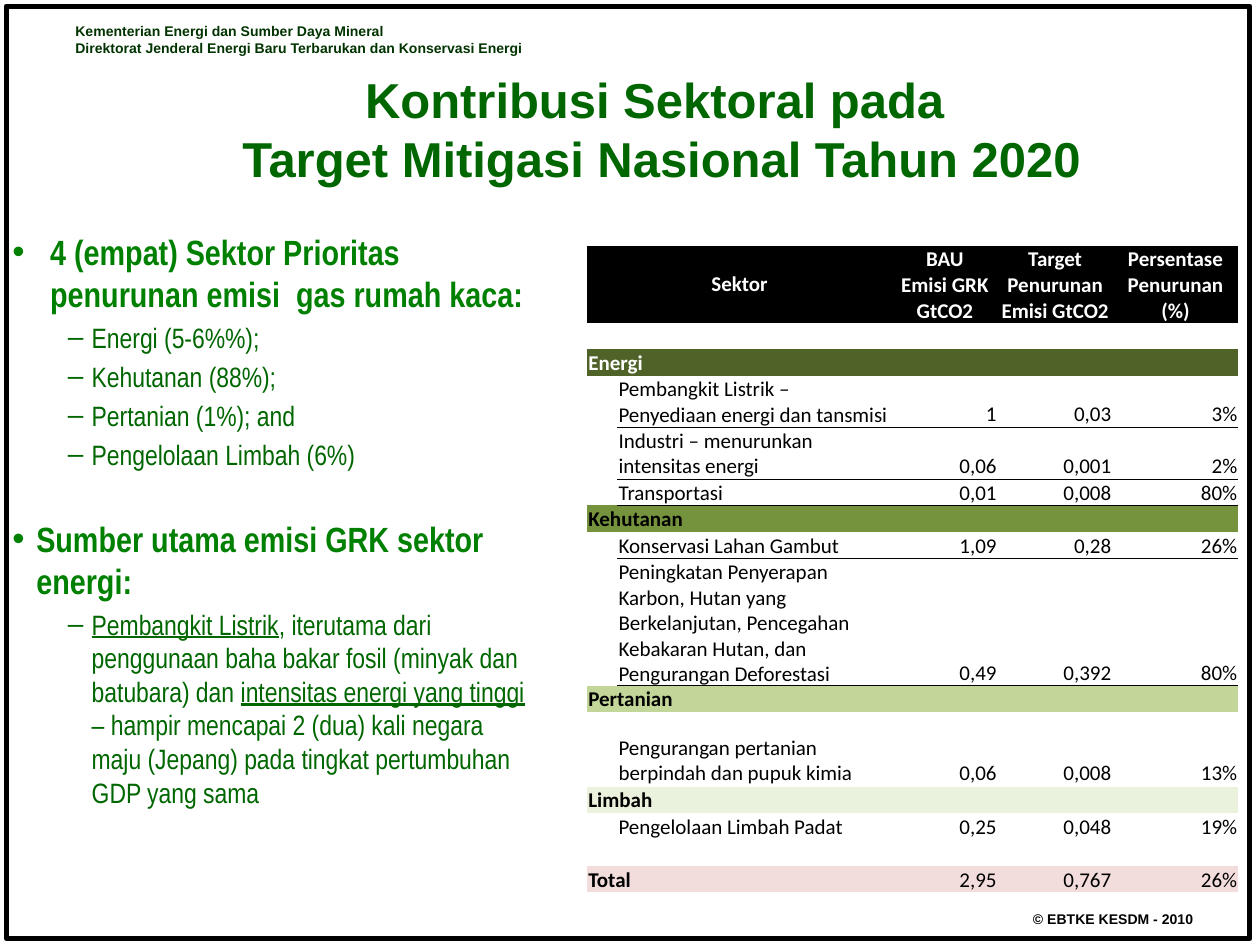
import pptx
import pptx.util
import pptx.dml.color
import pptx.enum.shapes
import pptx.enum.text
import pptx.oxml.ns
from lxml import etree

Inches = pptx.util.Inches
Pt = pptx.util.Pt
qn = pptx.oxml.ns.qn
ALIGN = pptx.enum.text.PP_ALIGN
ANCHOR = pptx.enum.text.MSO_ANCHOR

COLORS = {
    "black": "000000", "white": "FFFFFF", "ministry": "003300",
    "title": "006600", "heading": "008000", "energi": "4F6228",
    "kehutanan": "75923C", "pertanian": "C2D69A", "limbah": "EAF1DD",
    "total": "F2DDDC",
}
SMALL = {"name": "Arial", "size": Pt(8), "bold": True}
TITLE = {"name": "Arial", "size": Pt(28), "bold": True}
HEADING = {"name": "Arial Narrow", "size": Pt(20), "bold": True}
ITEM = {"name": "Arial Narrow", "size": Pt(16), "bold": False}
CELL = {"name": "Calibri", "size": Pt(12), "bold": False}
CELL_BOLD = {**CELL, "bold": True}

BULLETS = [
    (0, 0.3, 0, [("4 (empat) Sektor Prioritas penurunan emisi  gas rumah kaca:", False)]),
    (1, 0.63, 3.2, [("Energi (5-6%%);", False)]),
    (1, 0.63, 3.2, [("Kehutanan (88%);", False)]),
    (1, 0.63, 3.2, [("Pertanian (1%); and", False)]),
    (1, 0.63, 3.2, [("Pengelolaan Limbah (6%)", False)]),
    (0, 0.19, 26.5, [("Sumber utama emisi GRK sektor energi:", False)]),
    (1, 0.63, 3.2, [
        ("Pembangkit Listrik", True),
        (", iterutama dari penggunaan baha bakar fosil (minyak dan batubara) dan ", False),
        ("intensitas energi yang tinggi ", True),
        ("– hampir mencapai 2 (dua) kali negara maju (Jepang) pada tingkat "
         "pertumbuhan GDP yang sama", False)]),
]

COLUMNS = [0.24, 2.18, 0.84, 0.91, 1]
HEADER = ["Sektor", "BAU\nEmisi GRK\nGtCO2", "Target Penurunan Emisi GtCO2",
          "Persentase Penurunan\n(%)"]
ROWS = [
    ("header", 0.59, HEADER),
    ("blank", 0.2, []),
    ("energi", 0.2, ["Energi"]),
    ("ruled", 0.39, ["Pembangkit Listrik – Penyediaan energi dan tansmisi", "1", "0,03", "3%"]),
    ("ruled", 0.39, ["Industri – menurunkan intensitas energi", "0,06", "0,001", "2%"]),
    ("plain", 0.2, ["Transportasi", "0,01", "0,008", "80%"]),
    ("kehutanan", 0.2, ["Kehutanan"]),
    ("ruled", 0.2, ["Konservasi Lahan Gambut", "1,09", "0,28", "26%"]),
    ("plain", 0.97, ["Peningkatan Penyerapan Karbon, Hutan yang Berkelanjutan, Pencegahan "
                     "Kebakaran Hutan, dan Pengurangan Deforestasi", "0,49", "0,392", "80%"]),
    ("pertanian", 0.2, ["Pertanian"]),
    ("plain", 0.59, ["Pengurangan pertanian berpindah dan pupuk kimia", "0,06", "0,008", "13%"]),
    ("limbah", 0.2, ["Limbah"]),
    ("plain", 0.2, ["Pengelolaan Limbah Padat", "0,25", "0,048", "19%"]),
    ("blank", 0.2, []),
    ("total", 0.2, ["Total", "2,95", "0,767", "26%"]),
]


def rgb(name):
    return pptx.dml.color.RGBColor.from_string(COLORS[name])


def set_font(font, values, color):
    for key, value in values.items():
        setattr(font, key, value)
    font.color.rgb = rgb(color)


def add_frame(s, box):
    sp = s.shapes.add_shape(pptx.enum.shapes.MSO_SHAPE.RECTANGLE, *map(Inches, box))
    sp.shadow.inherit = False
    sp.fill.background()
    sp.line.color.rgb = rgb("black")
    sp.line.width = Pt(3)


def add_text(s, box, paragraphs, values, color, align):
    tf = s.shapes.add_textbox(*map(Inches, box)).text_frame
    tf.word_wrap = True
    for i, text in enumerate(paragraphs):
        p = tf.add_paragraph() if i else tf.paragraphs[0]
        p.text = text
        p.alignment = align
        for r in p.runs:
            set_font(r.font, values, color)


def add_bullets(s, box):
    tf = s.shapes.add_textbox(*map(Inches, box)).text_frame
    tf.word_wrap = True
    for i, (level, left, before, runs) in enumerate(BULLETS):
        p = tf.add_paragraph() if i else tf.paragraphs[0]
        p.level = level
        p.space_before = Pt(before)
        pPr = p._p.get_or_add_pPr()
        pPr.set("marL", str(Inches(left)))
        pPr.set("indent", str(-Inches(0.19 if level else left)))
        etree.SubElement(pPr, qn("a:buFont"), typeface="Arial")
        etree.SubElement(pPr, qn("a:buChar"), char="–" if level else "•")
        for text, underline in runs:
            r = p.add_run()
            r.text = text
            set_font(r.font, ITEM if level else HEADING, "title" if level else "heading")
            r.font.underline = underline


def add_border(cell, side):
    ln = etree.Element(qn("a:" + side), w=str(Pt(0.5)))
    fill = etree.SubElement(ln, qn("a:solidFill"))
    etree.SubElement(fill, qn("a:srgbClr"), val=COLORS["black"])
    cell._tc.get_or_add_tcPr().insert(0, ln)


def fill_cell(cell, text, kind, col):
    for side in ("left", "right", "top"):
        setattr(cell, "margin_" + side, Inches(0.01))
    cell.margin_bottom = 0
    header = kind == "header"
    cell.vertical_anchor = ANCHOR.MIDDLE if header else ANCHOR.BOTTOM
    if header or kind in COLORS:
        cell.fill.solid()
        cell.fill.fore_color.rgb = rgb("black" if header else kind)
    else:
        cell.fill.background()
    cell.text = text
    bold = header or (col == 0 and kind in COLORS)
    color = "white" if kind in ("header", "energi") else "black"
    for p in cell.text_frame.paragraphs:
        p.alignment = ALIGN.CENTER if header else ALIGN.RIGHT if col > 1 else ALIGN.LEFT
        for r in p.runs:
            set_font(r.font, CELL_BOLD if bold else CELL, color)
        if not p.runs:
            etree.SubElement(p._p, qn("a:endParaRPr"), sz="1200")


def add_sector_table(s, box):
    table = s.shapes.add_table(len(ROWS), len(COLUMNS), *map(Inches, box)).table
    table.first_row = table.horz_banding = False
    style = table._tbl.tblPr.find(qn("a:tableStyleId"))
    style.text = "{2D5ABB26-0587-4C30-8999-92F81FD0307C}"
    for column, width in zip(table.columns, COLUMNS):
        column.width = Inches(width)
    for i, (kind, height, values) in enumerate(ROWS):
        table.rows[i].height = Inches(height)
        spanned = kind == "header" or kind in COLORS
        texts = values[:1] + [""] + values[1:] if spanned else [""] + values
        texts += [""] * (len(COLUMNS) - len(texts))
        for col, text in enumerate(texts):
            cell = table.cell(i, col)
            fill_cell(cell, text, kind, col)
            if kind == "ruled" and col:
                add_border(cell, "lnB")
            if ROWS[i - 1][0] == "ruled" and col:
                add_border(cell, "lnT")
        if spanned:
            table.cell(i, 0).merge(table.cell(i, 1))


def main():
    prs = pptx.Presentation()
    prs.slide_width, prs.slide_height = Inches(10), Inches(7.5)
    s = prs.slides.add_slide(prs.slide_layouts[6])
    add_frame(s, (0.05, 0.05, 9.87, 7.4))
    add_text(s, (0.5, 0.13, 7, 0.37),
             ["Kementerian Energi dan Sumber Daya Mineral",
              "Direktorat Jenderal Energi Baru Terbarukan dan Konservasi Energi"],
             SMALL, "ministry", ALIGN.LEFT)
    add_text(s, (8, 7.18, 1.67, 0.24), ["© EBTKE KESDM - 2010"], SMALL, "black", ALIGN.CENTER)
    add_text(s, (0.5, 0.5, 9.5, 1.25),
             ["Kontribusi Sektoral pada \vTarget Mitigasi Nasional Tahun 2020"],
             TITLE, "title", ALIGN.CENTER)
    add_bullets(s, (0, 1.78, 4.33, 5))
    add_sector_table(s, (4.66, 1.95, 5.18, 5.13))
    prs.save("out.pptx")


if __name__ == "__main__":
    main()
